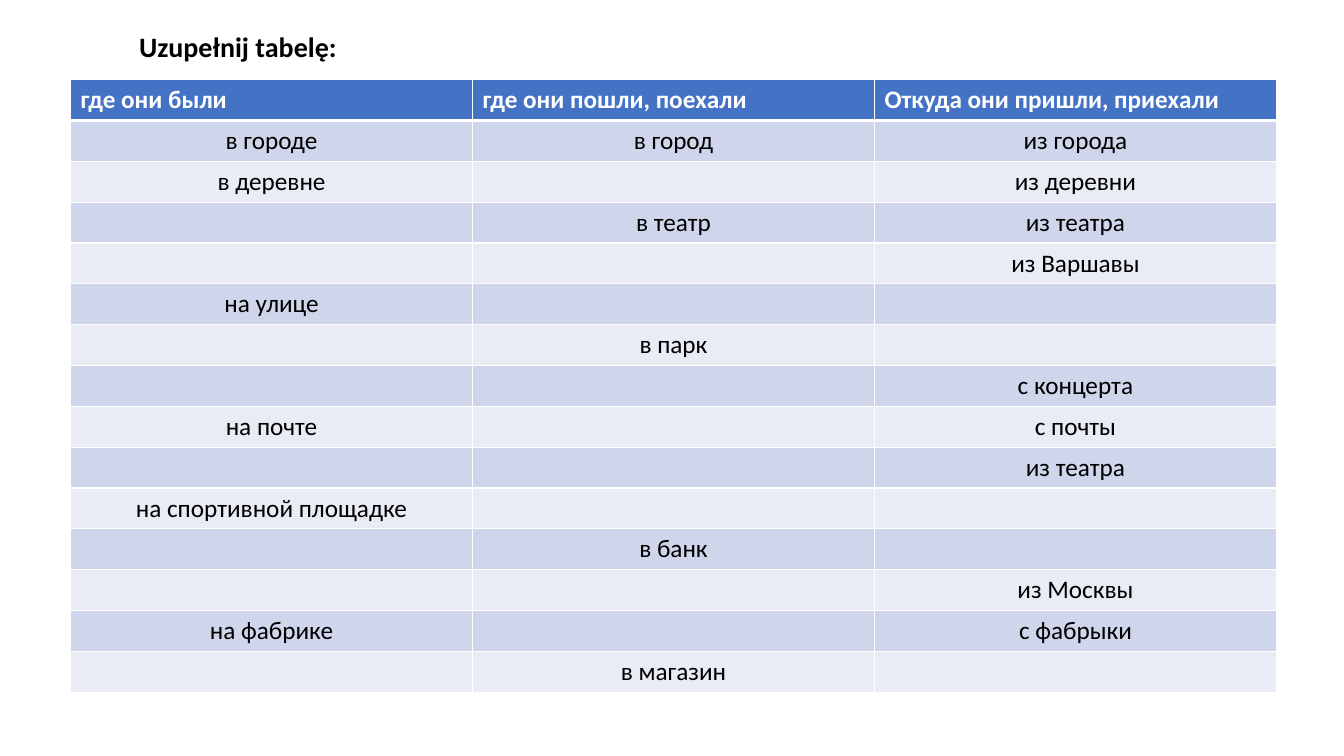
import pptx
import pptx.util
import pptx.dml.color
import pptx.enum.text
import pptx.oxml.ns
import lxml.etree

COLORS = {
    "header": "4472C4",
    "odd": "CFD5EA",
    "even": "E9EBF5",
    "border": "FFFFFF",
    "header_text": "FFFFFF",
    "text": "000000",
}
LEFT = pptx.enum.text.PP_ALIGN.LEFT
CENTER = pptx.enum.text.PP_ALIGN.CENTER

ROWS = [
    ("где они были", "где они пошли, поехали", "Откуда они пришли, приехали"),
    ("в городе", "в город", "из города"),
    ("в деревне", "", "из деревни"),
    ("", "в театр", "из театра"),
    ("", "", "из Варшавы"),
    ("на улице", "", ""),
    ("", "в парк", ""),
    ("", "", "с концерта"),
    ("на почте", "", "с почты"),
    ("", "", "из театра"),
    ("на спортивной площадке", "", ""),
    ("", "в банк", ""),
    ("", "", "из Mосквы"),
    ("на фабрике", "", "с фабрыки"),
    ("", "в магазин", ""),
]


def write(frame, text, size=18, color="text", bold=False, align=CENTER):
    paragraph = frame.paragraphs[0]
    paragraph.alignment = align
    if text:
        run = paragraph.add_run()
        run.text = text
        run.font.name = "Calibri"
        run.font.size = pptx.util.Pt(size)
        run.font.bold = bold
        run.font.color.rgb = pptx.dml.color.RGBColor.from_string(COLORS[color])


def add_border(cell, side, points):
    qn = pptx.oxml.ns.qn
    line = lxml.etree.SubElement(cell._tc.get_or_add_tcPr(), qn("a:ln" + side))
    line.set("w", str(pptx.util.Pt(points)))
    fill = lxml.etree.SubElement(line, qn("a:solidFill"))
    lxml.etree.SubElement(fill, qn("a:srgbClr")).set("val", COLORS["border"])


deck = pptx.Presentation()
deck.slide_width = pptx.util.Inches(13.33)
deck.slide_height = pptx.util.Inches(7.5)
slide = deck.slides.add_slide(deck.slide_layouts[5])

heading = slide.shapes.title
heading.left, heading.top = pptx.util.Inches(1.28), pptx.util.Inches(0.24)
heading.width, heading.height = pptx.util.Inches(2.24), pptx.util.Inches(0.44)
heading.text_frame.word_wrap = False
heading.text_frame.auto_size = pptx.enum.text.MSO_AUTO_SIZE.SHAPE_TO_FIT_TEXT
heading.text_frame.vertical_anchor = pptx.enum.text.MSO_ANCHOR.TOP
write(heading.text_frame, "Uzupełnij tabelę:", size=20, bold=True, align=LEFT)

places = slide.shapes.add_table(
    len(ROWS), len(ROWS[0]),
    pptx.util.Inches(0.7), pptx.util.Inches(0.79),
    pptx.util.Inches(11.96), pptx.util.Inches(6.08),
).table

for row, phrases in enumerate(ROWS):
    is_header = row == 0
    band = "header" if is_header else ("odd" if row % 2 else "even")
    for column, phrase in enumerate(phrases):
        cell = places.cell(row, column)
        for side in ("L", "R", "T", "B"):
            header_edge = (is_header and side == "B") or (row == 1 and side == "T")
            add_border(cell, side, 3 if header_edge else 1)
        cell.fill.solid()
        cell.fill.fore_color.rgb = pptx.dml.color.RGBColor.from_string(COLORS[band])
        write(
            cell.text_frame, phrase,
            color="header_text" if is_header else "text",
            bold=is_header,
            align=LEFT if is_header else CENTER,
        )

deck.save("out.pptx")
